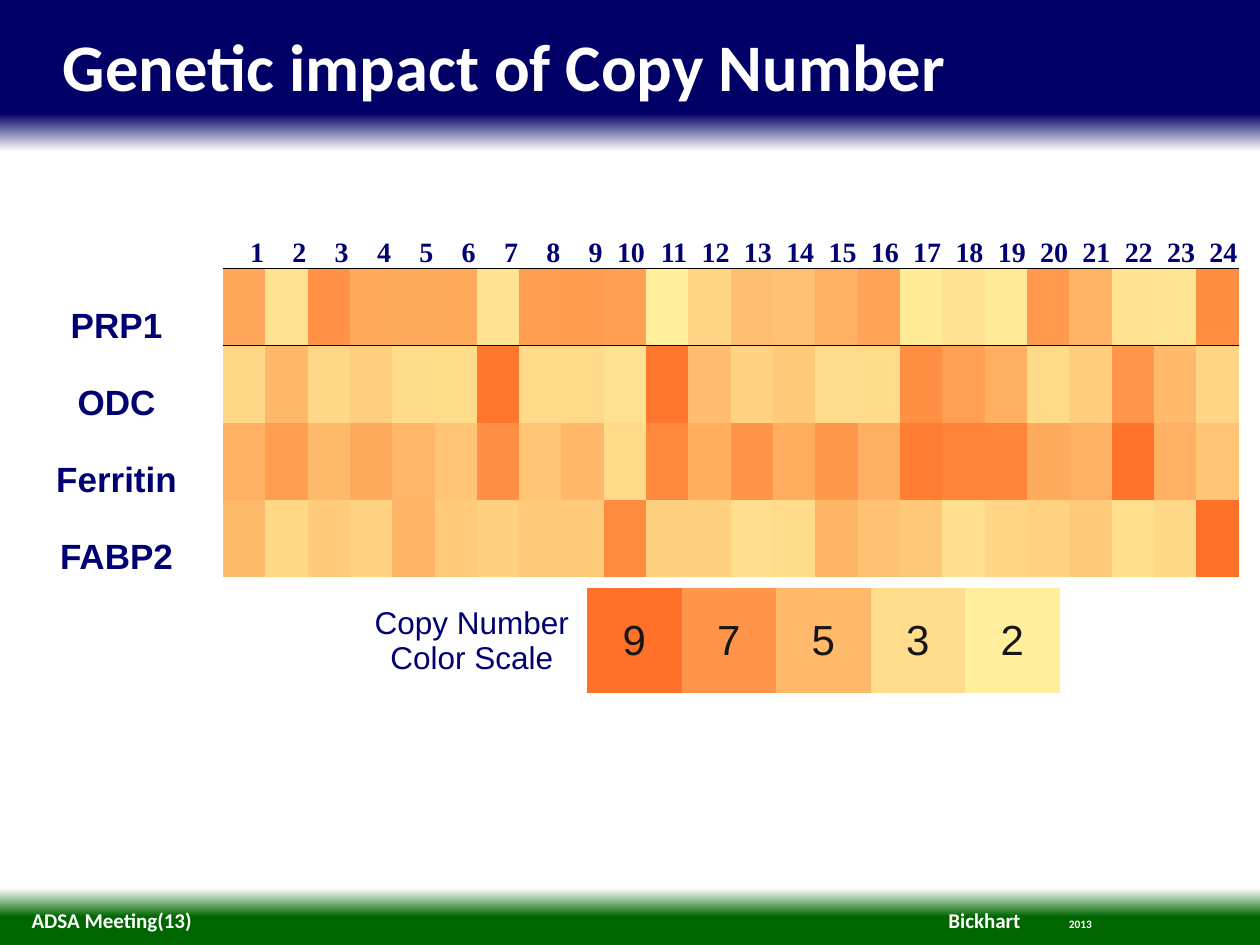
from lxml.etree import SubElement
from pptx import Presentation
from pptx.dml.color import RGBColor
from pptx.enum.text import MSO_ANCHOR as Anchor, PP_ALIGN as Align
from pptx.oxml import parse_xml
from pptx.oxml.ns import nsdecls, qn
from pptx.util import Inches, Pt

NAVY, WHITE, INK, BLACK = "000073", "FFFFFF", "161616", "000000"
BACKGROUND = [(0, "000066"), (12, "000066"), (16, WHITE),
              (94, WHITE), (97, "006600"), (100, "006600")]
NO_STYLE = "{2D5ABB26-0587-4C30-8999-92F81FD0307C}"

# Every heat colour has full red; only green and blue are listed
HEAT = {
    "PRP1": "A85B E290 9247 A95B AB5D A95B E391 9D51 9C4F 9F53 EF9C D685 "
            "BF70 C172 B062 A457 EC99 E18F EA98 994D B365 E391 E492 8D42",
    "ODC": "D887 B869 D887 CE7E DB8A DC8A 772E DA89 DB89 E290 772E BE6F "
           "D383 CA7A DC8B DB8A 8F43 A054 AF61 DB89 CE7D 964A BA6B D685",
    "Ferritin": "B062 9D51 B96A AB5E B667 C575 8F44 C575 B768 DB89 893E AE60 "
                "9549 AE60 974B AF61 7E34 8439 853A AB5D B163 732A B062 C474",
    "FABP2": "BB6C D887 CA7A D281 B567 CB7B D080 CA7A CA7A 8B40 D07F D080 "
             "DF8E DB8A B566 C272 C878 DF8D D685 D180 C979 DE8C D887 7128",
}
SCALE = {"9": "FF7128", "7": "FF954A", "5": "FFB96B", "3": "FFDD8C", "2": "FFEF9C"}


def rgb(color):
    return RGBColor.from_string(color)


def unit(count):
    """Grid of 100 columns by 75 rows on the slide."""
    return Inches(count / 10)


class Painter:
    def __init__(self, slide):
        self.slide = slide

    def background(self, stops):
        fill = self.slide.background.fill
        fill.gradient()
        fill.gradient_angle = 270
        stop_list = self.slide.element.xpath(".//a:gsLst")[0]
        for stop in list(stop_list):
            stop_list.remove(stop)
        for percent, color in stops:
            stop = SubElement(stop_list, qn("a:gs"), pos=str(percent * 1000))
            SubElement(stop, qn("a:srgbClr"), val=color)

    def set_text(self, frame, text, size, font, color, bold, align):
        frame.text = text
        para = frame.paragraphs[0]
        para.alignment = align
        for span in para.runs:
            span.font.size, span.font.name, span.font.bold = Pt(size), font, bold
            span.font.color.rgb = rgb(color)

    def text(self, place, text, size, align=Align.LEFT, anchor=Anchor.MIDDLE, wrap=True):
        frame = self.slide.shapes.add_textbox(*map(unit, place)).text_frame
        frame.word_wrap = wrap
        frame.vertical_anchor = anchor
        frame.margin_left = frame.margin_right = frame.margin_top = frame.margin_bottom = 0
        self.set_text(frame, text, size, "Calibri", WHITE, True, align)

    def table(self, left, top, widths, heights):
        frame = self.slide.shapes.add_table(
            len(heights), len(widths), unit(left), unit(top),
            unit(sum(widths)), unit(sum(heights)))
        table = frame.table
        table.first_row = table.horz_banding = False
        frame.element.xpath(".//a:tableStyleId")[0].text = NO_STYLE
        for column, width in zip(table.columns, widths):
            column.width = unit(width)
        for row, height in zip(table.rows, heights):
            row.height = unit(height)
        for cell in table.iter_cells():
            cell.fill.background()
            cell.margin_left = cell.margin_right = cell.margin_top = Inches(0.01)
            cell.margin_bottom = 0
        return table

    def label(self, cell, text, size, font="Arial", color=NAVY, bold=False,
              align=Align.CENTER, anchor=Anchor.MIDDLE):
        cell.vertical_anchor = anchor
        self.set_text(cell.text_frame, text, size, font, color, bold, align)

    def shade(self, cell, color):
        cell.fill.solid()
        cell.fill.fore_color.rgb = rgb(color)

    def border(self, cell, side):
        line = parse_xml(
            f'<a:{side} {nsdecls("a")} w="{Pt(0.5)}"><a:solidFill>'
            f'<a:srgbClr val="{BLACK}"/></a:solidFill></a:{side}>')
        cell._tc.get_or_add_tcPr().insert(0, line)


def main():
    deck = Presentation()
    deck.slide_width, deck.slide_height = unit(100), unit(75)
    painter = Painter(deck.slides.add_slide(deck.slide_layouts[6]))
    painter.background(BACKGROUND)

    # Footer and title
    painter.text((75.2, 72, 5.8, 2), "Bickhart", 12, Align.RIGHT, wrap=False)
    painter.text((2.5, 72, 52.2, 2), "ADSA Meeting(13)", 12)
    painter.text((82.7, 72.8, 6.1, 1.1), "2013", 6.5, Align.CENTER)
    painter.text((5, 2, 90, 6.4), "Genetic impact of Copy Number", 38, anchor=Anchor.TOP)

    # Heat map: one row per gene, one column per animal
    animals = 24
    heat_map = painter.table(0.8, 15.8, [16.9] + [80.6 / animals] * animals,
                             [5.5] + [6.12] * len(HEAT))
    for number in range(1, animals + 1):
        header = heat_map.cell(0, number)
        painter.label(header, str(number), 16, "Times New Roman", bold=True,
                      align=Align.RIGHT, anchor=Anchor.BOTTOM)
        painter.border(header, "lnB")
        painter.border(heat_map.cell(1, number), "lnT")
    for row, (gene, shades) in enumerate(HEAT.items(), 1):
        painter.label(heat_map.cell(row, 0), gene, 20, bold=True, anchor=Anchor.BOTTOM)
        for column, tone in enumerate(shades.split(), 1):
            painter.shade(heat_map.cell(row, column), "FF" + tone)

    # Colour scale
    scale = painter.table(28.3, 46.7, [18.3] + [7.5] * len(SCALE), [8.3])
    painter.label(scale.cell(0, 0), "Copy Number Color Scale", 18)
    for column, (copies, color) in enumerate(SCALE.items(), 1):
        painter.label(scale.cell(0, column), copies, 24, color=INK)
        painter.shade(scale.cell(0, column), color)

    deck.save("out.pptx")


if __name__ == "__main__":
    main()
